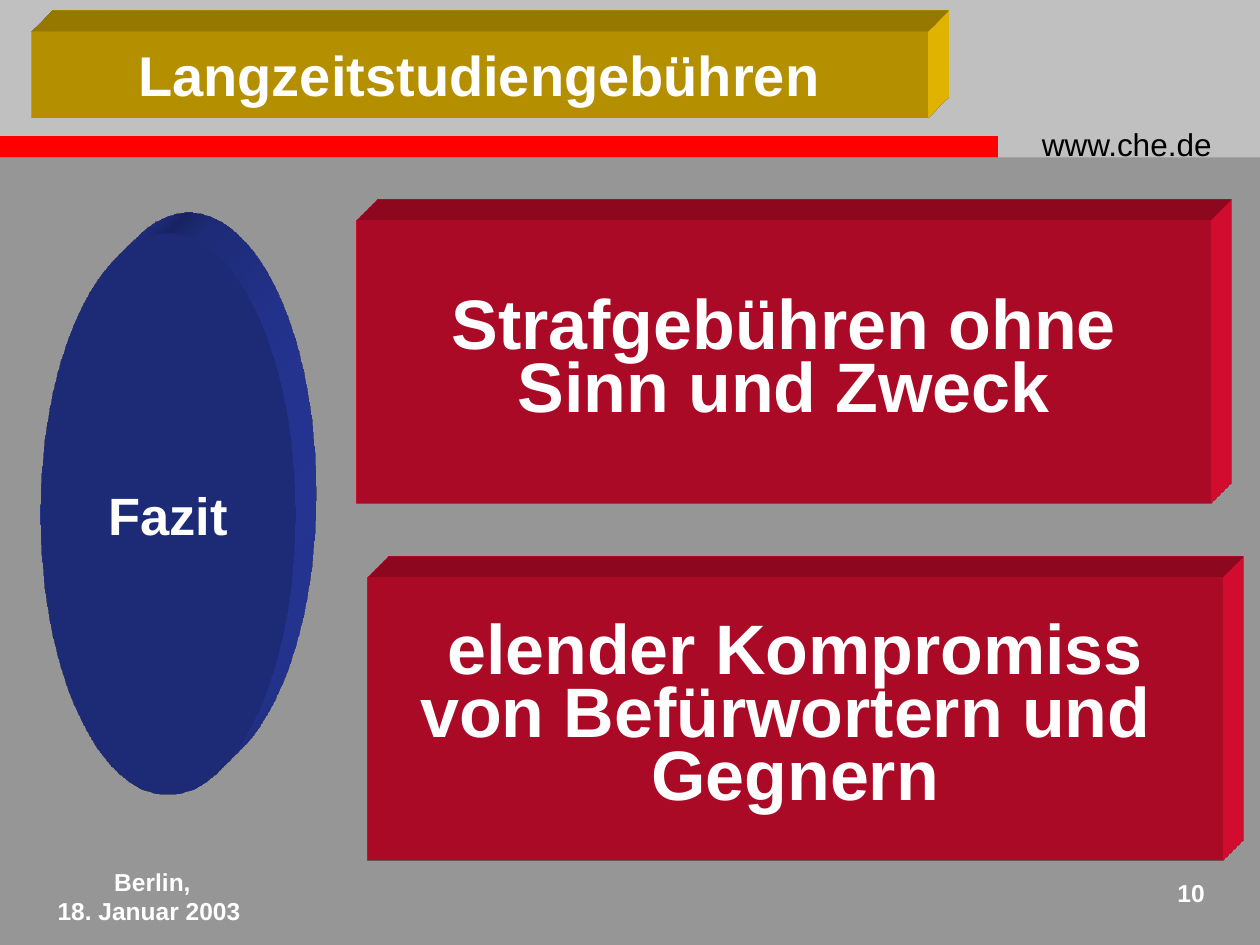
import pptx
import pptx.dml.color
import pptx.enum.shapes
import pptx.enum.text
import pptx.oxml
import pptx.util

Inches = pptx.util.Inches
RGBColor = pptx.dml.color.RGBColor
Shape = pptx.enum.shapes.MSO_SHAPE
Align = pptx.enum.text.PP_ALIGN
Anchor = pptx.enum.text.MSO_ANCHOR

GREY = RGBColor(0x96, 0x96, 0x96)
SILVER = RGBColor(0xC0, 0xC0, 0xC0)
RED = RGBColor(0xFF, 0x00, 0x00)
BLUE = RGBColor(0x29, 0x3B, 0xA5)
CRIMSON = RGBColor(0xF0, 0x0E, 0x34)
GOLD = RGBColor(0xFF, 0xCC, 0x00)
WHITE = RGBColor(0xFF, 0xFF, 0xFF)
BLACK = RGBColor(0x00, 0x00, 0x00)

NAMESPACE = 'xmlns:a="http://schemas.openxmlformats.org/drawingml/2006/main"'
SCENE = (
    f'<a:scene3d {NAMESPACE}><a:camera prst="legacyObliqueTopRight"/>'
    '<a:lightRig rig="legacyFlat3" dir="b"/></a:scene3d>'
)
EXTRUSION = (
    f'<a:sp3d {NAMESPACE} extrusionH="430200" prstMaterial="legacyMatte">'
    '<a:extrusionClr><a:srgbClr val="{color}"/></a:extrusionClr></a:sp3d>'
)


def write(shape, text, size, color=WHITE, bold=True, align=Align.CENTER,
          spacing=None, wrap=False, anchor=Anchor.MIDDLE):
    frame = shape.text_frame
    frame.text = text
    frame.word_wrap = wrap
    frame.vertical_anchor = anchor
    for para in frame.paragraphs:
        para.alignment = align
        para.line_spacing = spacing
        for span in para.runs:
            span.font.name = "Arial"
            span.font.size = pptx.util.Pt(size)
            span.font.bold = bold
            span.font.color.rgb = color


def add_flat(page, kind, box, color):
    shape = page.shapes.add_shape(kind, *map(Inches, box))
    shape.shadow.inherit = False
    shape.fill.solid()
    shape.fill.fore_color.rgb = color
    shape.line.fill.background()
    return shape


def add_block(page, kind, box, color):
    """Add a shape extruded towards the top right."""
    shape = add_flat(page, kind, box, color)
    properties = shape._element.spPr
    for xml in (SCENE, EXTRUSION.format(color=color)):
        properties.append(pptx.oxml.parse_xml(xml))
    return shape


def add_label(page, box, text, size, **style):
    label = page.shapes.add_textbox(*map(Inches, box))
    write(label, text, size, wrap=True, anchor=Anchor.TOP, **style)


def add_header(page, box):
    left, top, width, height = box
    add_flat(page, Shape.RECTANGLE, box, SILVER)
    stripe = 0.17
    add_flat(page, Shape.RECTANGLE,
             (left, top + height - stripe, 7.92, stripe), RED)
    add_label(page, (left + 8.17, top + 0.94, 1.75, 0.4), "www.che.de", 18,
              color=BLACK, bold=False, align=Align.LEFT)


def add_title(page, box):
    add_block(page, Shape.RECTANGLE, box, GOLD)
    title = page.shapes.title
    title.left, title.top, title.width, title.height = map(Inches, box)
    write(title, "Langzeitstudiengebühren", 32)
    page.shapes._spTree.append(title._element)  # in front of the gold block


def add_conclusion(page, box):
    left, top, width, height = box
    ellipse = add_block(page, Shape.OVAL, (left, top + 0.1, 2.03, 4.46), BLUE)
    write(ellipse, "Fazit", 30)
    block_width, block_height = 6.78, 2.25
    blocks = (
        (left + 2.51, top, "Strafgebühren ohne\nSinn und Zweck"),
        (left + width - block_width, top + height - block_height,
         "elender Kompromiss\nvon Befürwortern und \nGegnern"),
    )
    for x, y, text in blocks:
        block = add_block(page, Shape.RECTANGLE,
                          (x, y, block_width, block_height), CRIMSON)
        write(block, text, 40, spacing=0.75)


def add_footer(page, box):
    left, top, width, height = box
    add_label(page, (left, top, 2.42, height), "Berlin,\n18. Januar 2003 ", 14)
    number_width = 0.58
    add_label(page, (left + width - number_width, top + 0.09, number_width, 0.42),
              "10", 14, align=Align.RIGHT)


def main():
    deck = pptx.Presentation()
    deck.slide_width, deck.slide_height = Inches(10), Inches(7.5)
    page = deck.slides.add_slide(deck.slide_layouts[5])
    page.background.fill.solid()
    page.background.fill.fore_color.rgb = GREY
    add_header(page, (0, 0, 10, 1.25))
    add_footer(page, (0, 6.83, 9.66, 0.5))
    add_conclusion(page, (0.32, 1.75, 9.38, 5.08))
    add_title(page, (0.25, 0.25, 7.11, 0.68))
    deck.save("out.pptx")


if __name__ == "__main__":
    main()
